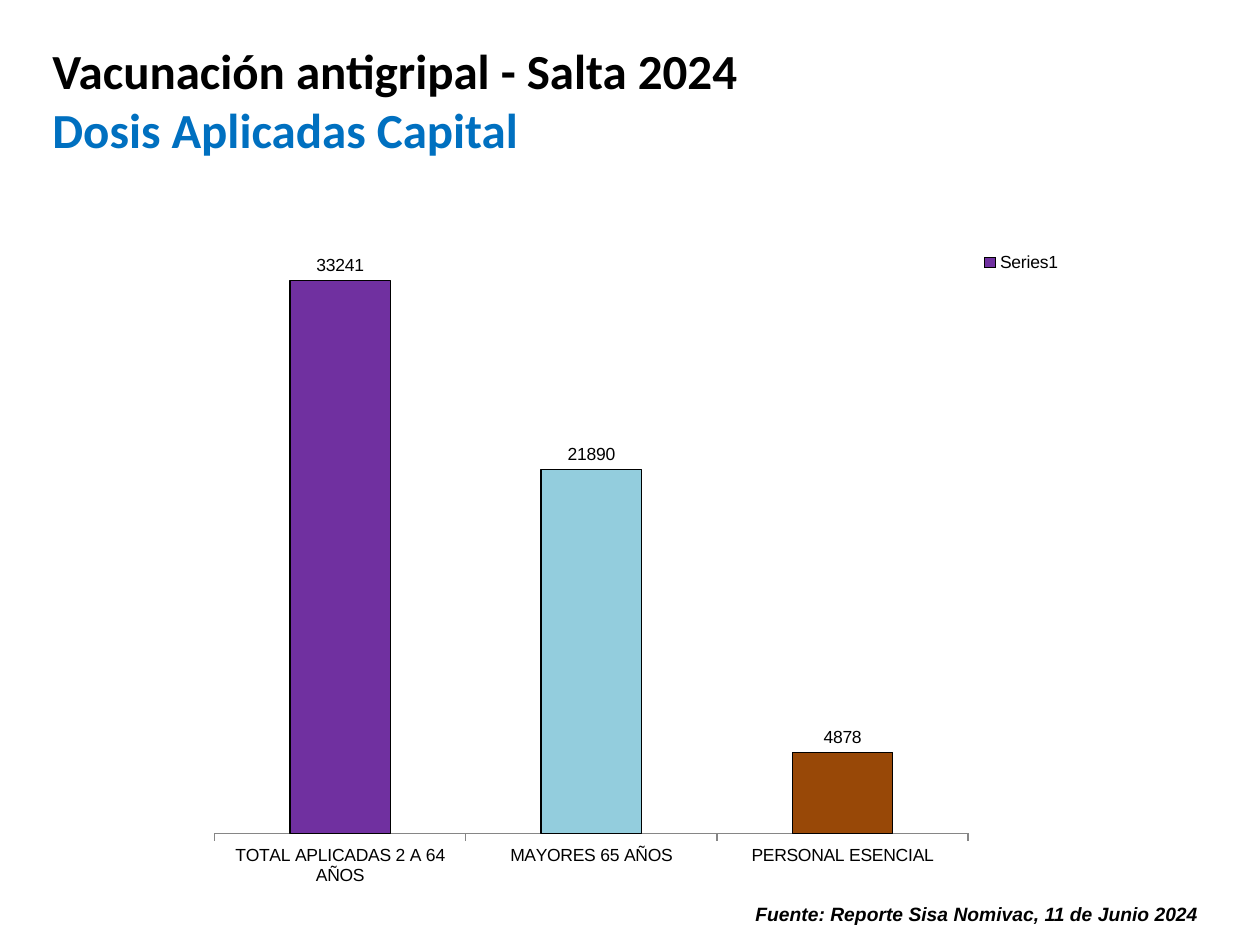
import lxml.etree
import pptx
import pptx.chart.data
import pptx.dml.color
import pptx.enum.chart
import pptx.util

PX = 914400 / 126
COLORS = {"black": "000000", "blue": "0070C0", "purple": "7030A0",
          "aqua": "93CDDD", "brown": "984807", "axis": "868686"}
DOSES = [("TOTAL APLICADAS 2 A 64 AÑOS", 33241, "purple"),
         ("MAYORES 65 AÑOS", 21890, "aqua"),
         ("PERSONAL ESENCIAL", 4878, "brown")]
CHART_NS = "http://schemas.openxmlformats.org/drawingml/2006/chart"


def px(*values):
    return [pptx.util.Emu(round(v * PX)) for v in values]


def rgb(name):
    return pptx.dml.color.RGBColor.from_string(COLORS[name])


def set_values(obj, values):
    for name, value in values.items():
        setattr(obj, name, value)


def style_font(font, color, **values):
    set_values(font, values)
    font.color.rgb = rgb(color)


def add_text(slide, box, lines, **values):
    tf = slide.shapes.add_textbox(*px(*box)).text_frame
    tf.word_wrap = True
    for i, (text, color) in enumerate(lines):
        p = tf.add_paragraph() if i else tf.paragraphs[0]
        r = p.add_run()
        r.text = text
        style_font(r.font, color, **values)


def add_layout(parent, index, **values):
    tag = "{%s}" % CHART_NS
    for old in parent.findall(tag + "layout"):
        parent.remove(old)
    layout = lxml.etree.Element(tag + "layout")
    manual = lxml.etree.SubElement(layout, tag + "manualLayout")
    for name, value in values.items():
        lxml.etree.SubElement(manual, tag + name).set("val", str(value))
    parent.insert(index, layout)


def color_columns(series):
    for i, (_, _, color) in enumerate(DOSES):
        for target in ([series] if i == 0 else [series.points[i]]):
            target.format.fill.solid()
            target.format.fill.fore_color.rgb = rgb(color)
            target.format.line.color.rgb = rgb("black")
            target.format.line.width = pptx.util.Pt(0.75)


def style_axes(chart):
    ticks = pptx.enum.chart.XL_TICK_MARK
    set_values(chart.value_axis, {"visible": False, "minimum_scale": 0, "maximum_scale": 35000,
                                  "has_major_gridlines": False})
    set_values(chart.category_axis, {"major_tick_mark": ticks.OUTSIDE, "minor_tick_mark": ticks.NONE,
                                     "has_major_gridlines": False})
    chart.category_axis.format.line.color.rgb = rgb("axis")


def add_dose_chart(slide, box):
    data = pptx.chart.data.CategoryChartData(number_format="General")
    data.categories = [name for name, _, _ in DOSES]
    data.add_series("Series1", [doses for _, doses, _ in DOSES])
    kind = pptx.enum.chart.XL_CHART_TYPE.COLUMN_CLUSTERED
    chart = slide.shapes.add_chart(kind, *px(*box), data).chart
    set_values(chart, {"has_title": False, "has_legend": True})
    style_font(chart.font, "black", name="Arial", size=pptx.util.Pt(10))
    style_axes(chart)

    plot = chart.plots[0]
    set_values(plot, {"gap_width": 150, "vary_by_categories": False, "has_data_labels": True})
    set_values(plot.data_labels, {"show_value": True,
                                  "position": pptx.enum.chart.XL_LABEL_POSITION.OUTSIDE_END})
    color_columns(plot.series[0])

    set_values(chart.legend, {"position": pptx.enum.chart.XL_LEGEND_POSITION.RIGHT,
                              "include_in_layout": False})
    root = chart.element
    add_layout(root.find(".//{%s}plotArea" % CHART_NS), 0, layoutTarget="inner",
               xMode="edge", yMode="edge", x=0.163, y=0.115, w=0.628, h=0.781)
    add_layout(root.find(".//{%s}legend" % CHART_NS), 1,
               xMode="edge", yMode="edge", x=0.8, y=0.11)


def main():
    prs = pptx.Presentation()
    prs.slide_width, prs.slide_height = px(1260, 945)
    slide = prs.slides.add_slide(prs.slide_layouts[6])
    add_text(slide, (40, 34, 735, 131),
             [("Vacunación antigripal - Salta 2024", "black"), ("Dosis Aplicadas Capital", "blue")],
             name="Calibri", size=pptx.util.Pt(28), bold=True)
    add_text(slide, (743, 896, 499, 34),
             [("Fuente: Reporte Sisa Nomivac, 11 de Junio 2024", "black")],
             name="Arial", size=pptx.util.Pt(11), bold=True, italic=True)
    add_dose_chart(slide, (19, 166, 1200, 745))
    prs.save("out.pptx")


if __name__ == "__main__":
    main()
